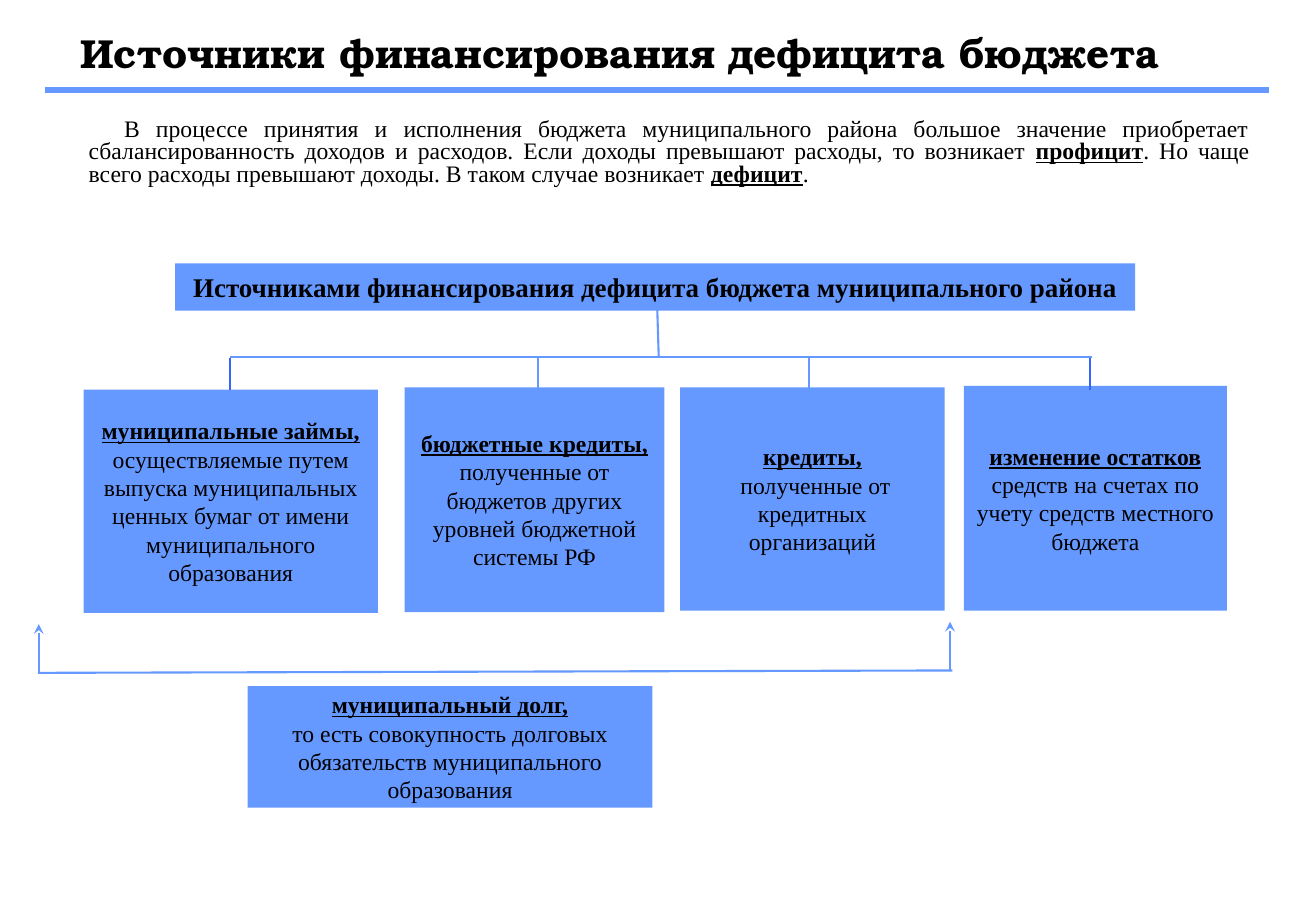
"""Build the slide on the sources that finance a budget deficit."""
from lxml.etree import SubElement
from pptx import Presentation
from pptx.dml.color import RGBColor
from pptx.enum.shapes import MSO_CONNECTOR, MSO_SHAPE
from pptx.enum.text import MSO_ANCHOR, MSO_AUTO_SIZE, PP_ALIGN
from pptx.oxml.ns import qn
from pptx.util import Cm, Pt

COLOURS = {"text": "000000", "blue": "6699FF", "dark_blue": "3366FF"}
TITLE_FONT = "TeX Gyre Bonum"
BODY_FONT = "Times New Roman"

INTRODUCTION = [
    ("В процессе принятия и исполнения бюджета муниципального района большое "
     "значение приобретает сбалансированность доходов и расходов. Если доходы "
     "превышают расходы, то возникает ", False),
    ("профицит", True),
    (". Но чаще всего расходы превышают доходы. В таком случае возникает ", False),
    ("дефицит", True),
    (".", False),
]

SOURCES = [
    ((1.75, 8.15, 6.15, 4.67),
     [[("муниципальные займы,", True),
       (" осуществляемые путем выпуска муниципальных ценных бумаг от имени "
        "муниципального образования", False)]]),
    ((8.46, 8.1, 5.43, 4.7),
     [[("бюджетные кредиты,", True),
       (" полученные от бюджетов других уровней бюджетной системы РФ", False)]]),
    ((14.22, 8.1, 5.53, 4.67),
     [[("кредиты,", True)],
      [(" полученные от кредитных организаций", False)]]),
    ((20.15, 8.07, 5.5, 4.7),
     [[("изменение остатков", True),
       (" средств на счетах по учету средств местного бюджета", False)]]),
]

BRANCHES = [(4.8, "dark_blue"), (11.25, "blue"), (16.92, "blue"), (22.78, "dark_blue")]


def colour(name):
    return RGBColor.from_string(COLOURS[name])


def format_paragraph(paragraph, alignment, size, font_name=BODY_FONT, bold=None):
    paragraph.alignment = alignment
    paragraph.font.name = font_name
    paragraph.font.size = Pt(size)
    paragraph.font.bold = bold
    paragraph.font.color.rgb = colour("text")


def add_runs(paragraph, runs):
    for text, emphasised in runs:
        run = paragraph.add_run()
        run.text = text
        if emphasised:
            run.font.bold = True
            run.font.underline = True


def place(shape, left, top, width, height):
    shape.left, shape.top = Cm(left), Cm(top)
    shape.width, shape.height = Cm(width), Cm(height)


def fill_title(shape):
    place(shape, 1.42, 0.41, 24.77, 1.37)
    frame = shape.text_frame
    frame.text = "Источники финансирования дефицита бюджета"
    frame.auto_size = MSO_AUTO_SIZE.NONE
    frame.vertical_anchor = MSO_ANCHOR.MIDDLE
    format_paragraph(frame.paragraphs[0], PP_ALIGN.LEFT, 24, TITLE_FONT, bold=True)


def fill_introduction(shape):
    place(shape, 1.6, 2.36, 24.77, 2.24)
    frame = shape.text_frame
    frame.auto_size = MSO_AUTO_SIZE.NONE
    paragraph = frame.paragraphs[0]
    add_runs(paragraph, INTRODUCTION)
    format_paragraph(paragraph, PP_ALIGN.JUSTIFY, 14)
    paragraph.line_spacing = 0.8
    paragraph.space_before = Pt(2.8)
    properties = paragraph._p.get_or_add_pPr()
    properties.set("marL", "0")
    properties.set("indent", str(Cm(0.74)))
    properties.insert_element_before(
        properties.makeelement(qn("a:buNone")), "a:tabLst", "a:defRPr", "a:extLst")


def add_box(slide, bounds, paragraphs, size=14, bold=None):
    shape = slide.shapes.add_shape(
        MSO_SHAPE.RECTANGLE, *(Cm(length) for length in bounds))
    shape.shadow.inherit = False
    shape.fill.solid()
    shape.fill.fore_color.rgb = colour("blue")
    shape.line.fill.background()
    frame = shape.text_frame
    frame.word_wrap = True
    frame.vertical_anchor = MSO_ANCHOR.MIDDLE
    for index, runs in enumerate(paragraphs):
        paragraph = frame.add_paragraph() if index else frame.paragraphs[0]
        add_runs(paragraph, runs)
        format_paragraph(paragraph, PP_ALIGN.CENTER, size, bold=bold)


def add_line(slide, start, end, colour_name="blue", width=1.25, arrow=False):
    connector = slide.shapes.add_connector(
        MSO_CONNECTOR.STRAIGHT, *(Cm(length) for length in start + end))
    connector.line.color.rgb = colour(colour_name)
    connector.line.width = Pt(width)
    if arrow:
        SubElement(connector.line._get_or_add_ln(), qn("a:tailEnd"), type="stealth")
    SubElement(connector._element.spPr, qn("a:effectLst"))


def main():
    presentation = Presentation()
    presentation.slide_width, presentation.slide_height = Cm(27.51), Cm(19.05)
    slide = presentation.slides.add_slide(presentation.slide_layouts[1])

    fill_title(slide.shapes.title)
    fill_introduction(slide.placeholders[1])
    add_line(slide, (0.95, 1.88), (26.52, 1.88), width=3.75)

    heading = "Источниками финансирования дефицита бюджета муниципального района"
    add_box(slide, (3.66, 5.51, 20.07, 0.99), [[(heading, False)]], size=16, bold=True)
    for bounds, paragraphs in SOURCES:
        add_box(slide, bounds, paragraphs)

    add_line(slide, (13.74, 6.48), (13.77, 7.45))
    for x, colour_name in BRANCHES:
        add_line(slide, (x, 7.48), (x, 8.16), colour_name)
    add_line(slide, (4.8, 7.47), (22.83, 7.47))

    add_line(slide, (0.79, 14.07), (19.91, 14.02))
    for x, bottom, top in [(0.81, 14.05, 13.05), (19.86, 14.02, 13)]:
        add_line(slide, (x, bottom), (x, top), arrow=True)
    add_box(slide, (5.18, 14.35, 8.46, 2.54), [
        [("муниципальный долг,", True)],
        [("то есть совокупность долговых обязательств муниципального образования",
          False)],
    ])
    presentation.save("out.pptx")


if __name__ == "__main__":
    main()
